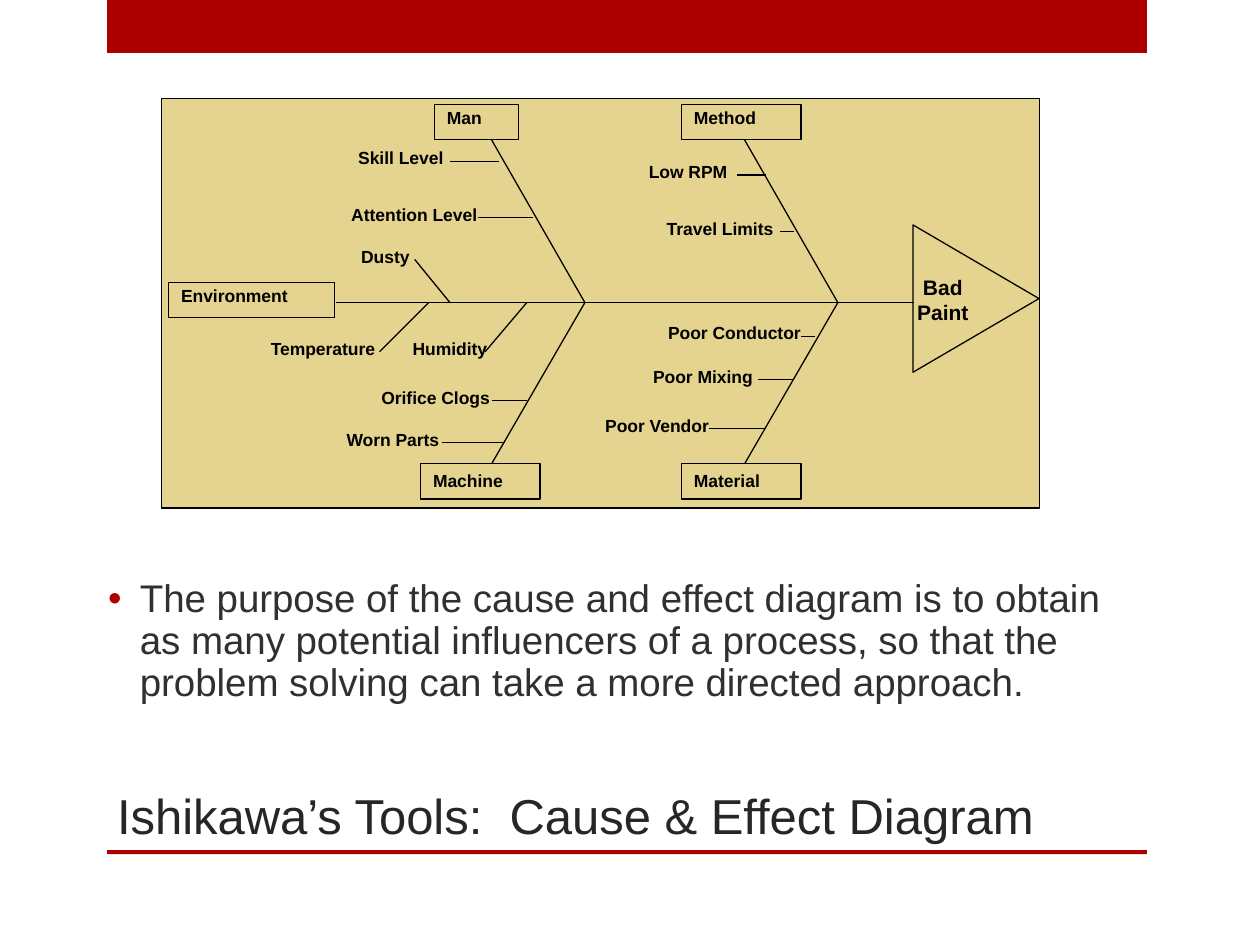
from lxml.etree import SubElement
from pptx import Presentation
from pptx.dml.color import RGBColor
from pptx.enum.shapes import MSO_CONNECTOR, MSO_SHAPE
from pptx.enum.text import MSO_ANCHOR as Anchor, PP_ALIGN as Align
from pptx.oxml.ns import qn
from pptx.util import Cm, Pt

RED, TAN, BLACK = "AD0101", "E4D490", "000000"
TITLE = "Ishikawa’s Tools:  Cause & Effect Diagram"
PURPOSE = ("The purpose of the cause and effect diagram is to obtain as many "
           "potential influencers of a process, so that the problem solving "
           "can take a more directed approach.")
EFFECT = " Bad Paint"

# All lengths are in centimetres.
SPINE = 6.1                      # height of the main line
TOP, LOW, HIGH = 2.11, 9.35, 0.71    # rows of category boxes, box height
LABEL = 0.56                     # height of a cause label

# name, left, top, width, top inset
GROUPS = [
    ("Material", 13.74, LOW, 2.41, 0.13),
    ("Machine", 8.48, LOW, 2.41, 0.13),
    ("Man", 8.76, TOP, 1.7, 0.05),
    ("Method", 13.74, TOP, 2.41, 0.05),
    ("Environment", 3.4, 5.69, 3.35, 0.05),
]
# start and end of each pair of bones
BONES = [(9.91, 11.79), (15.01, 16.89)]

# name, left, top, width, twig start, twig end
BONE_CAUSES = [
    ("Skill Level", 7.09, 2.97, 1.98, 9.07, 10.06),
    ("Attention Level", 6.93, 4.11, 2.84, 9.63, 10.74),
    ("Low RPM", 12.88, 3.25, 1.98, 14.86, 15.44),
    ("Travel Limits", 13.31, 4.39, 2.41, 15.72, 16),
    ("Poor Conductor", 13.46, 6.5, 2.69, 16.15, 16.43),
    ("Poor Mixing", 12.75, 7.37, 2.84, 15.29, 16),
    ("Poor Vendor", 12.04, 8.36, 2.41, 14.3, 15.44),
    ("Orifice Clogs", 7.65, 7.8, 2.26, 9.91, 10.62),
    ("Worn Parts", 6.93, 8.64, 1.98, 8.92, 10.19),
]
SPINE_CAUSES = [
    ("Dusty", 6.78, 4.95, 1.98, 8.36, 9.07),
    ("Temperature", 5.38, 6.81, 2.26, 7.65, 8.64),
    ("Humidity", 8.08, 6.81, 1.98, 9.78, 10.62),
]

deck = Presentation()
deck.slide_width, deck.slide_height = Cm(25.4), Cm(19.05)
shapes = deck.slides.add_slide(deck.slide_layouts[6]).shapes


def color(code):
    return RGBColor.from_string(code)


def draw(kind, box, fill=None, line=None):
    shape = shapes.add_shape(kind, *map(Cm, box))
    shape.shadow.inherit = False
    if fill:
        shape.fill.solid()
        shape.fill.fore_color.rgb = color(fill)
    else:
        shape.fill.background()
    if line:
        shape.line.color.rgb = color(line)
        shape.line.width = Pt(0.75)
    else:
        shape.line.fill.background()
    return shape


def write(shape, text, size, ink=BLACK, bold=True, align=Align.LEFT,
          anchor=Anchor.TOP, inset=(0.25, 0.13)):
    """Fill a shape with one paragraph and return that paragraph."""
    frame = shape.text_frame
    frame.word_wrap = True
    frame.vertical_anchor = anchor
    frame.margin_left = frame.margin_right = Cm(inset[0])
    frame.margin_top = frame.margin_bottom = Cm(inset[1])
    para = frame.paragraphs[0]
    para.text, para.alignment = text, align
    font = para.font
    font.name, font.size, font.bold = "Arial", Pt(size), bold
    font.color.rgb = color(ink)
    return para


def link(x1, y1, x2, y2):
    line = shapes.add_connector(MSO_CONNECTOR.STRAIGHT,
                                *map(Cm, (x1, y1, x2, y2)))
    line.line.color.rgb = color(BLACK)
    line.line.width = Pt(0.75)
    SubElement(line._element.spPr, qn("a:effectLst"))


def add_bullet(para, ink, indent):
    props = para._p.get_or_add_pPr()
    props.set("marL", str(Cm(indent)))
    props.set("indent", str(-Cm(indent)))
    tint = SubElement(props, qn("a:buClr"))
    SubElement(tint, qn("a:srgbClr")).set("val", ink)
    SubElement(props, qn("a:buFont")).set("typeface", "Arial")
    SubElement(props, qn("a:buChar")).set("char", "•")
    # Bullet settings must come before the default run properties.
    props.append(props.find(qn("a:defRPr")))


def text_box(*box):
    return shapes.add_textbox(*map(Cm, box))


# Page frame and text
for top, height in [(0, 1.07), (17.14, 0.08)]:
    draw(MSO_SHAPE.RECTANGLE, (2.16, top, 20.96, height), RED)
write(text_box(2.11, 14.33, 21.13, 2.82), TITLE, 28, "262626", False,
      anchor=Anchor.BOTTOM)
body = write(text_box(1.93, 11.46, 20.96, 2.97), PURPOSE, 22, "303030", False,
             anchor=Anchor.MIDDLE)
body.line_spacing = 0.9
add_bullet(body, RED, 0.64)

# Fishbone
draw(MSO_SHAPE.RECTANGLE, (3.25, 1.98, 17.7, 8.26), TAN, BLACK)
for name, left, top, width, pad in GROUPS:
    box = draw(MSO_SHAPE.RECTANGLE, (left, top, width, HIGH), TAN, BLACK)
    write(box, name, 10, inset=(0.25, pad))

link(6.78, SPINE, 18.42, SPINE)
for start, end in BONES:
    for edge in (TOP + HIGH, LOW):
        link(start, edge, end, SPINE)

for name, left, top, width, *_ in BONE_CAUSES + SPINE_CAUSES:
    label = draw(MSO_SHAPE.RECTANGLE, (left, top, width, LABEL), TAN)
    write(label, name, 10, align=Align.CENTER, inset=(0, 0))
for causes, slanted in [(BONE_CAUSES, False), (SPINE_CAUSES, True)]:
    for _, _, top, _, start, end in causes:
        mid = top + LABEL / 2
        link(start, mid, end, SPINE if slanted else mid)

write(text_box(18.24, 5.41, 2.24, 1.07), EFFECT, 12)
head = draw(MSO_SHAPE.ISOSCELES_TRIANGLE, (18.19, 4.75, 2.97, 2.54), line=BLACK)
head.rotation = 90

deck.save("out.pptx")
